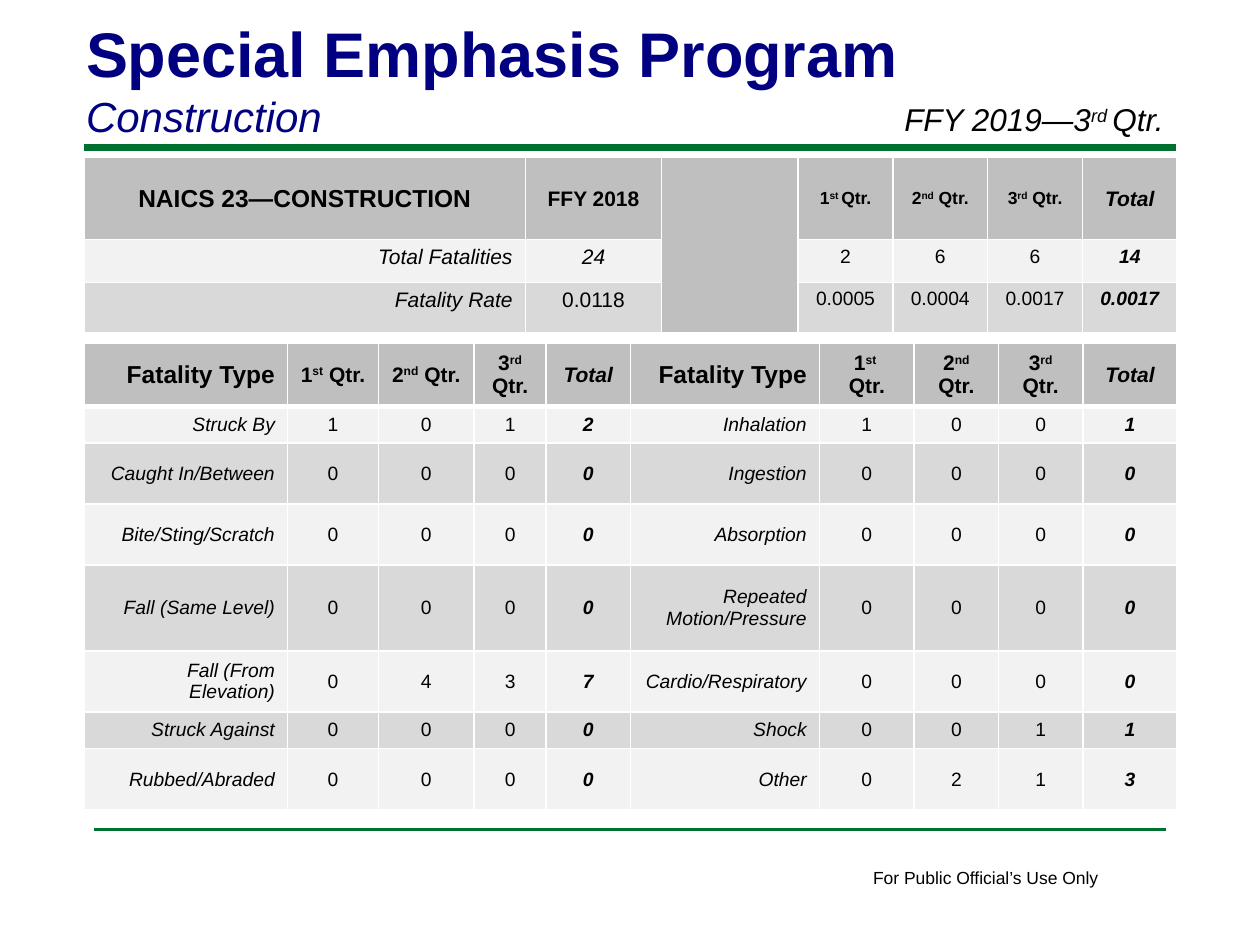
from lxml.etree import SubElement
from pptx import Presentation
from pptx.dml.color import RGBColor
from pptx.enum.shapes import MSO_CONNECTOR
from pptx.enum.text import MSO_ANCHOR, MSO_AUTO_SIZE, PP_ALIGN
from pptx.oxml.ns import qn
from pptx.util import Cm, Pt

GREEN = RGBColor(0x00, 0x70, 0x30)
NAVY = RGBColor(0x00, 0x00, 0x80)
BLACK = RGBColor(0x00, 0x00, 0x00)
HEADER = RGBColor(0xBF, 0xBF, 0xBF)
BANDS = [RGBColor(0xD9, 0xD9, 0xD9), RGBColor(0xF2, 0xF2, 0xF2)]
CENTER, RIGHT = PP_ALIGN.CENTER, PP_ALIGN.RIGHT
MIDDLE, TOP = MSO_ANCHOR.MIDDLE, MSO_ANCHOR.TOP


def write(para, text, size, color=BLACK, bold=False, italic=False, align=None):
    """Fill a paragraph; text between carets is superscript."""
    para.alignment = align
    font = para.font
    font.name, font.size, font.bold, font.italic = "Arial", Pt(size), bold, italic
    font.color.rgb = color
    for i, part in enumerate(text.split("^")):
        if part:
            span = para.add_run()
            span.text = part
            if i % 2:
                span.font._element.set("baseline", "30000")


def add_grid(page, top, widths, heights, header_rule):
    """Add a table with white rules and banded fills."""
    frame = page.shapes.add_table(len(heights), len(widths), Cm(1.7), Cm(top),
                                  Cm(sum(widths)), Cm(sum(heights)))
    table = frame.table
    table.first_row = table.horz_banding = False
    for column, width in zip(table.columns, widths):
        column.width = Cm(width)
    for r, (row, height) in enumerate(zip(table.rows, heights)):
        row.height = Cm(height)
        for cell in row.cells:
            properties = cell._tc.get_or_add_tcPr()
            for side in "LRTB":
                at_header = (r, side) in [(0, "B"), (1, "T")]
                weight = Pt(header_rule if at_header else 1)
                line = SubElement(properties, qn("a:ln" + side), w=str(weight))
                fill = SubElement(line, qn("a:solidFill"))
                SubElement(fill, qn("a:srgbClr"), val="FFFFFF")
            cell.fill.solid()
            cell.fill.fore_color.rgb = BANDS[r % 2] if r else HEADER
    return table


deck = Presentation()
deck.slide_width, deck.slide_height = Cm(25.4), Cm(19.05)
page = deck.slides.add_slide(deck.slide_layouts[5])

# Green rules above the tables and above the footer
for left, right, y, weight in [(1.7, 23.7, 2.97, 4), (1.9, 23.5, 16.72, 2)]:
    rule = page.shapes.add_connector(MSO_CONNECTOR.STRAIGHT,
                                     Cm(left), Cm(y), Cm(right), Cm(y))
    rule.line.color.rgb = GREEN
    rule.line.width = Pt(weight)
    SubElement(rule._element.spPr, qn("a:effectLst"))

# Title
title = page.shapes.title
title.left, title.top, title.width, title.height = Cm(1.48), Cm(0.15), Cm(20.95), Cm(2.82)
frame = title.text_frame
frame.auto_size = MSO_AUTO_SIZE.NONE
frame.vertical_anchor = MSO_ANCHOR.BOTTOM
write(frame.paragraphs[0], "Special Emphasis Program", 36, NAVY, bold=True, align=PP_ALIGN.LEFT)
write(frame.add_paragraph(), "Construction", 24, NAVY, italic=True, align=PP_ALIGN.LEFT)

# Reporting period and footer
for left, top, width, height, text, size, italic, wrap in [
    (17.98, 1.9, 6.35, 1.02, "FFY 2019—3^rd ^Qtr.", 18, True, True),
    (17.35, 17.35, 5.1, 0.69, "For Public Official’s Use Only", 10, False, False),
]:
    box = page.shapes.add_textbox(Cm(left), Cm(top), Cm(width), Cm(height))
    box.text_frame.word_wrap = wrap
    write(box.text_frame.paragraphs[0], text, size, italic=italic)

# Fatality totals
summary_rows = [
    ["NAICS 23—CONSTRUCTION", "FFY 2018", "", "1^st ^Qtr.", "2^nd^ Qtr.", "3^rd^ Qtr.", "Total"],
    ["Total Fatalities", "24", "", "2", "6", "6", "14"],
    ["Fatality Rate", "0.0118", "", "0.0005", "0.0004", "0.0017", "0.0017"],
]
summary = add_grid(page, 3.18, [8.89, 2.75, 2.75] + [1.91] * 4, [1.65, 0.86, 0.86], 1)
summary.cell(0, 2).merge(summary.cell(2, 2))
header_sizes = [14, 12, 12, 10, 10, 10, 12]
for r, row in enumerate(summary_rows):
    for c, text in enumerate(row):
        if not text:
            continue
        cell = summary.cell(r, c)
        cell.vertical_anchor = TOP if r else MIDDLE
        size = (12 if c < 2 else 11) if r else header_sizes[c]
        italic = c == 6 or (r > 0 and c == 0) or (r, c) == (1, 1)
        write(cell.text_frame.paragraphs[0], text, size, bold=r == 0 or c == 6,
              italic=italic, align=RIGHT if r and c == 0 else CENTER)

# Fatalities by type, in two halves of five columns
type_rows = [
    ["Fatality Type", "1^st^ Qtr.", "2^nd^ Qtr.", "3^rd^ Qtr.", "Total",
     "Fatality Type", "1^st ^\nQtr.", "2^nd^ Qtr.", "3^rd^ Qtr.", "Total"],
    ["Struck By", 1, 0, 1, 2, "Inhalation", 1, 0, 0, 1],
    ["Caught In/Between", 0, 0, 0, 0, "Ingestion", 0, 0, 0, 0],
    ["Bite/Sting/Scratch", 0, 0, 0, 0, "Absorption", 0, 0, 0, 0],
    ["Fall (Same Level)", 0, 0, 0, 0, "Repeated Motion/Pressure", 0, 0, 0, 0],
    ["Fall (From Elevation)", 0, 4, 3, 7, "Cardio/Respiratory", 0, 0, 0, 0],
    ["Struck Against", 0, 0, 0, 0, "Shock", 0, 0, 1, 1],
    ["Rubbed/Abraded", 0, 0, 0, 0, "Other", 0, 2, 1, 3],
]
types = add_grid(page, 6.92, [4.1, 1.83, 1.93, 1.45, 1.7, 3.81, 1.91, 1.7, 1.7, 1.9],
                 [1.23, 0.74, 1.23, 1.23, 1.73, 1.23, 0.74, 1.24], 3)
for r, row in enumerate(type_rows):
    for c, value in enumerate(row):
        cell = types.cell(r, c)
        cell.vertical_anchor = MIDDLE
        is_name, is_total = c % 5 == 0, c % 5 == 4
        size = 11 if r else 14 if is_name else 12
        for i, text in enumerate(str(value).split("\n")):
            para = cell.text_frame.add_paragraph() if i else cell.text_frame.paragraphs[0]
            write(para, text, size, bold=r == 0 or is_total,
                  italic=is_total or (r > 0 and is_name), align=RIGHT if is_name else CENTER)

deck.save("out.pptx")
